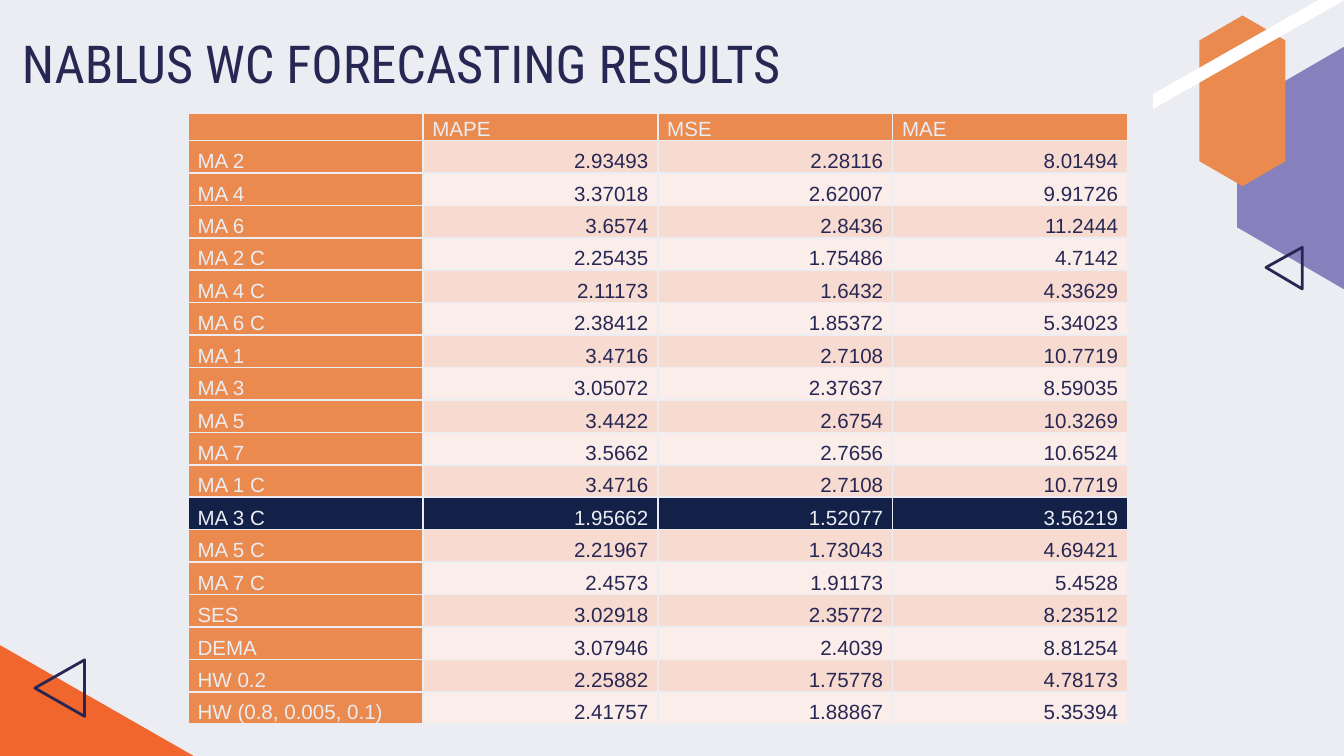
from lxml import etree
from pptx import Presentation
from pptx.dml.color import RGBColor
from pptx.enum.shapes import MSO_SHAPE
from pptx.enum.text import MSO_ANCHOR, PP_ALIGN
from pptx.oxml.ns import qn
from pptx.util import Inches, Pt

HEXAGON = MSO_SHAPE.HEXAGON
TOP, BOTTOM = MSO_ANCHOR.TOP, MSO_ANCHOR.BOTTOM
LEFT, CENTER, RIGHT = PP_ALIGN.LEFT, PP_ALIGN.CENTER, PP_ALIGN.RIGHT

THEME = {
    "paper": "ECEDF3", "ink": "272753", "purple": "8680BC", "orange": "EA8A4F",
    "flame": "F1662D", "white": "FFFFFF", "best": "132048",
    "bands": ("F7DAD0", "FBEDE9"),
    "title_font": "Roboto Condensed", "title_size": 28,
    "body_font": "Arial", "body_size": 11,
    "outline": 1.5, "rule": 1,
}

TITLE = "NABLUS WC FORECASTING RESULTS"
HEADER = ("", "MAPE", "MSE", "MAE")
RESULTS = [
    ("MA 2", "2.93493", "2.28116", "8.01494"),
    ("MA 4", "3.37018", "2.62007", "9.91726"),
    ("MA 6", "3.6574", "2.8436", "11.2444"),
    ("MA 2 C", "2.25435", "1.75486", "4.7142"),
    ("MA 4 C", "2.11173", "1.6432", "4.33629"),
    ("MA 6 C", "2.38412", "1.85372", "5.34023"),
    ("MA 1", "3.4716", "2.7108", "10.7719"),
    ("MA 3", "3.05072", "2.37637", "8.59035"),
    ("MA 5", "3.4422", "2.6754", "10.3269"),
    ("MA 7", "3.5662", "2.7656", "10.6524"),
    ("MA 1 C", "3.4716", "2.7108", "10.7719"),
    ("MA 3 C", "1.95662", "1.52077", "3.56219"),
    ("MA 5 C", "2.21967", "1.73043", "4.69421"),
    ("MA 7 C", "2.4573", "1.91173", "5.4528"),
    ("SES", "3.02918", "2.35772", "8.23512"),
    ("DEMA", "3.07946", "2.4039", "8.81254"),
    ("HW 0.2", "2.25882", "1.75778", "4.78173"),
    ("HW (0.8, 0.005, 0.1)", "2.41757", "1.88867", "5.35394"),
]
BEST = "MA 3 C"

TITLE_BOX = (-7.4, 1.3, 74.5, 6.3)
TABLE_BOX = (14, 8.45, 69.9, 45.5)
HEADER_HEIGHT = 2
DECOR = [
    ("hexagon", (91, 4.5, 18.1, 16), "purple"),
    ("outline", [(96.9, 18.4), (94.2, 19.9), (96.9, 21.5)], "ink"),
    ("hexagon", (86.1, 4.3, 12.7, 6.4), "orange"),
    ("solid", [(85.8, 7), (105.3, -4.1), (105.3, -3), (85.8, 8.1)], "white"),
    ("solid", [(-0.1, 56.25), (-0.1, 47.95), (14.4, 56.25)], "flame"),
    ("outline", [(6.3, 49.1), (6.3, 53.3), (2.6, 51.2)], "ink"),
]

prs = Presentation()
prs.slide_width = Inches(10)
prs.slide_height = prs.slide_width * 9 // 16
slide = prs.slides.add_slide(prs.slide_layouts[6])


def share(percent):
    return round(prs.slide_width * percent / 100)


def paint(fill, color):
    fill.solid()
    fill.fore_color.rgb = RGBColor.from_string(color)


def style_text(p, font, size, color, align):
    p.alignment = align
    for r in p.runs:
        r.font.name, r.font.size = font, Pt(size)
        r.font.color.rgb = RGBColor.from_string(color)


def add_decor(kind, geometry, color):
    if kind == "hexagon":
        sp = slide.shapes.add_shape(HEXAGON, *map(share, geometry))
        sp.adjustments[0] = 0.29
        sp.rotation = 270
    else:
        points = [(share(x), share(y)) for x, y in geometry]
        builder = slide.shapes.build_freeform(*points[0])
        builder.add_line_segments(points[1:], close=True)
        sp = builder.convert_to_shape()
    sp.shadow.inherit = False
    if kind == "outline":
        sp.fill.background()
        sp.line.width = Pt(THEME["outline"])
        paint(sp.line.fill, THEME[color])
    else:
        paint(sp.fill, THEME[color])
        sp.line.fill.background()


def add_borders(cell):
    tc_pr = cell._tc.get_or_add_tcPr()
    for i, tag in enumerate(("a:lnL", "a:lnR", "a:lnT", "a:lnB")):
        ln = etree.Element(qn(tag), w=str(Pt(THEME["rule"])))
        fill = etree.SubElement(ln, qn("a:solidFill"))
        etree.SubElement(fill, qn("a:srgbClr"), val=THEME["paper"])
        tc_pr.insert(i, ln)


def cell_colors(row, col, label):
    if label == BEST:
        return THEME["best"], THEME["paper"]
    if row == 0 or col == 0:
        return THEME["orange"], THEME["paper"]
    return THEME["bands"][(row - 1) % 2], THEME["ink"]


def fill_cell(cell, text, row, col, label):
    background, color = cell_colors(row, col, label)
    paint(cell.fill, background)
    add_borders(cell)
    cell.margin_left = cell.margin_right = Inches(0.07)
    cell.margin_top = cell.margin_bottom = 0
    cell.vertical_anchor = BOTTOM
    cell.text_frame.text = text
    p = cell.text_frame.paragraphs[0]
    p.line_spacing = 1.07
    style_text(p, THEME["body_font"], THEME["body_size"], color,
               RIGHT if row and col else LEFT)
    if not text:
        etree.SubElement(p._p, qn("a:endParaRPr"), sz=str(THEME["body_size"] * 100))


def add_results():
    rows = [HEADER] + RESULTS
    table = slide.shapes.add_table(len(rows), len(HEADER), *map(share, TABLE_BOX)).table
    table.first_row = table.horz_banding = False
    for column in table.columns:
        column.width = share(TABLE_BOX[2] / len(HEADER))
    row_height = (TABLE_BOX[3] - HEADER_HEIGHT) / len(RESULTS)
    for i, values in enumerate(rows):
        table.rows[i].height = share(row_height if i else HEADER_HEIGHT)
        for j, text in enumerate(values):
            fill_cell(table.cell(i, j), text, i, j, values[0])


def add_title():
    tf = slide.shapes.add_textbox(*map(share, TITLE_BOX)).text_frame
    tf.word_wrap = True
    tf.vertical_anchor = TOP
    tf.margin_left = tf.margin_right = tf.margin_top = tf.margin_bottom = Inches(0.1)
    tf.text = TITLE
    style_text(tf.paragraphs[0], THEME["title_font"], THEME["title_size"],
               THEME["ink"], CENTER)


paint(slide.background.fill, THEME["paper"])
for item in DECOR:
    add_decor(*item)
add_title()
add_results()
prs.save("out.pptx")
